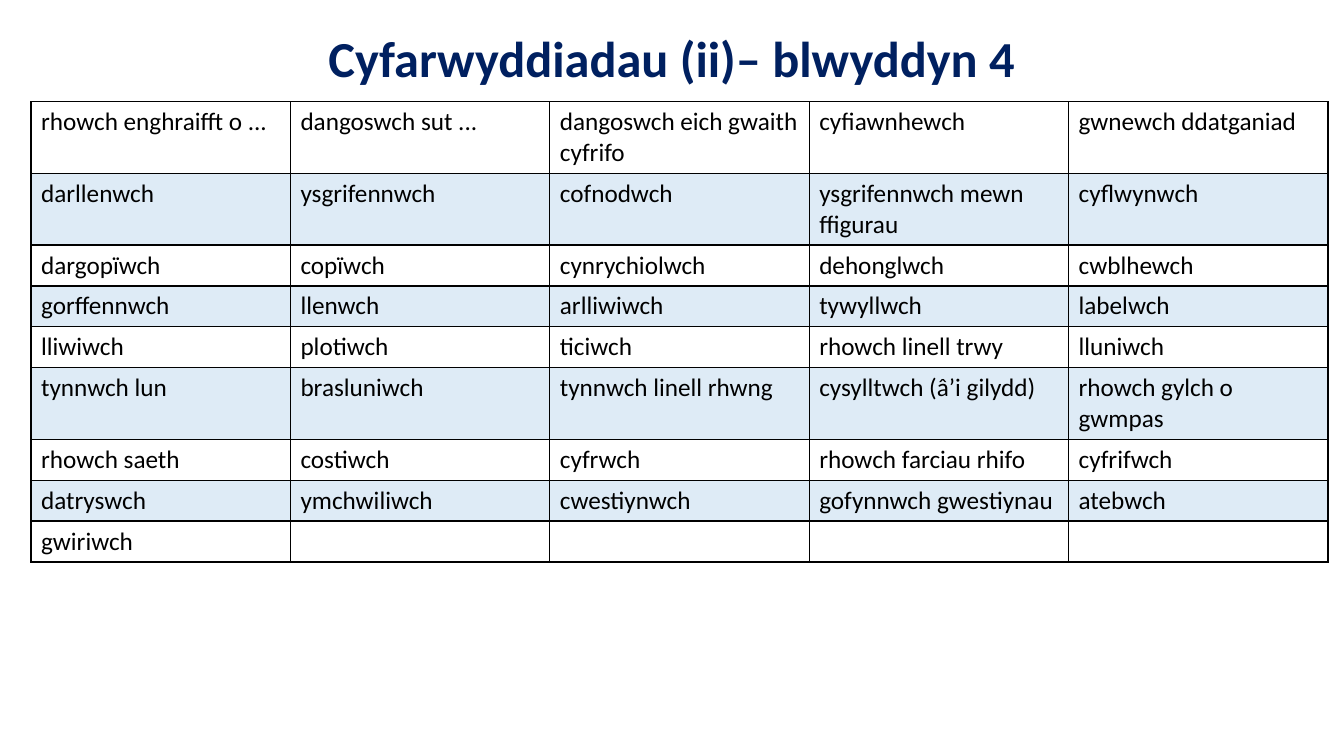
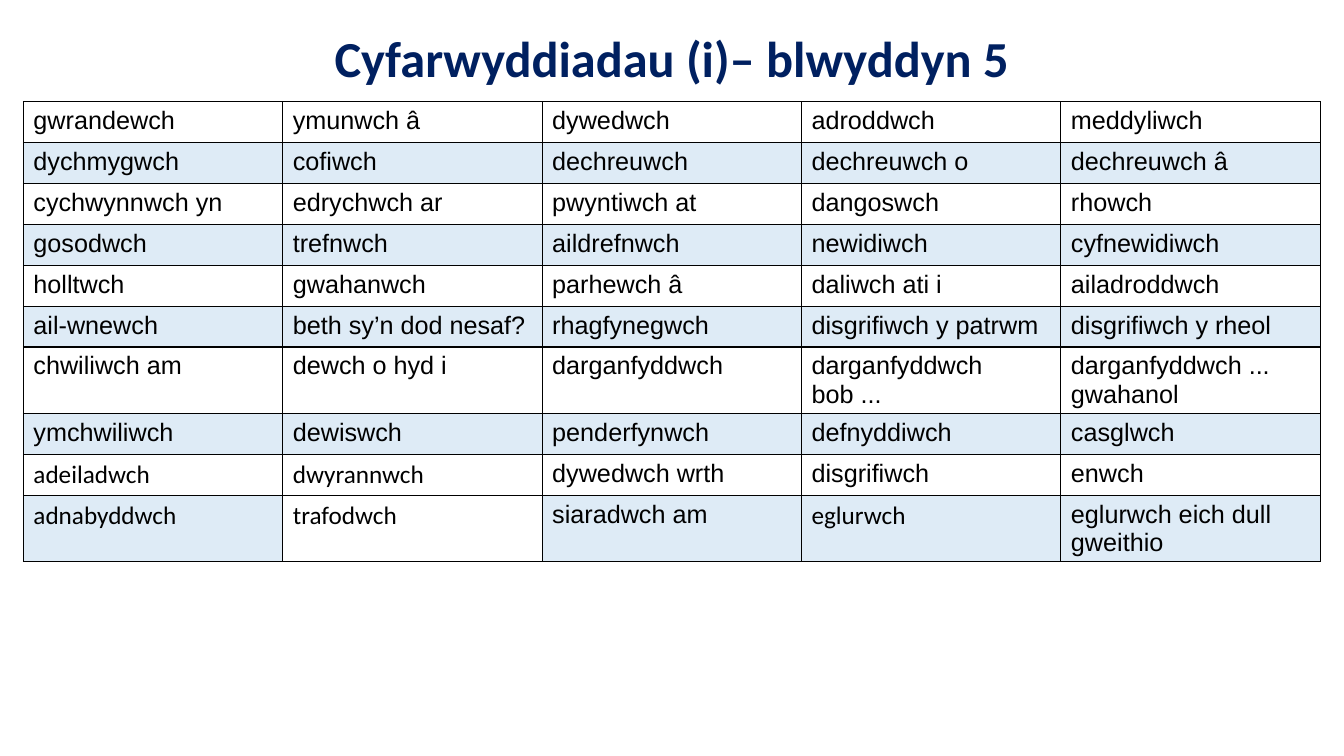
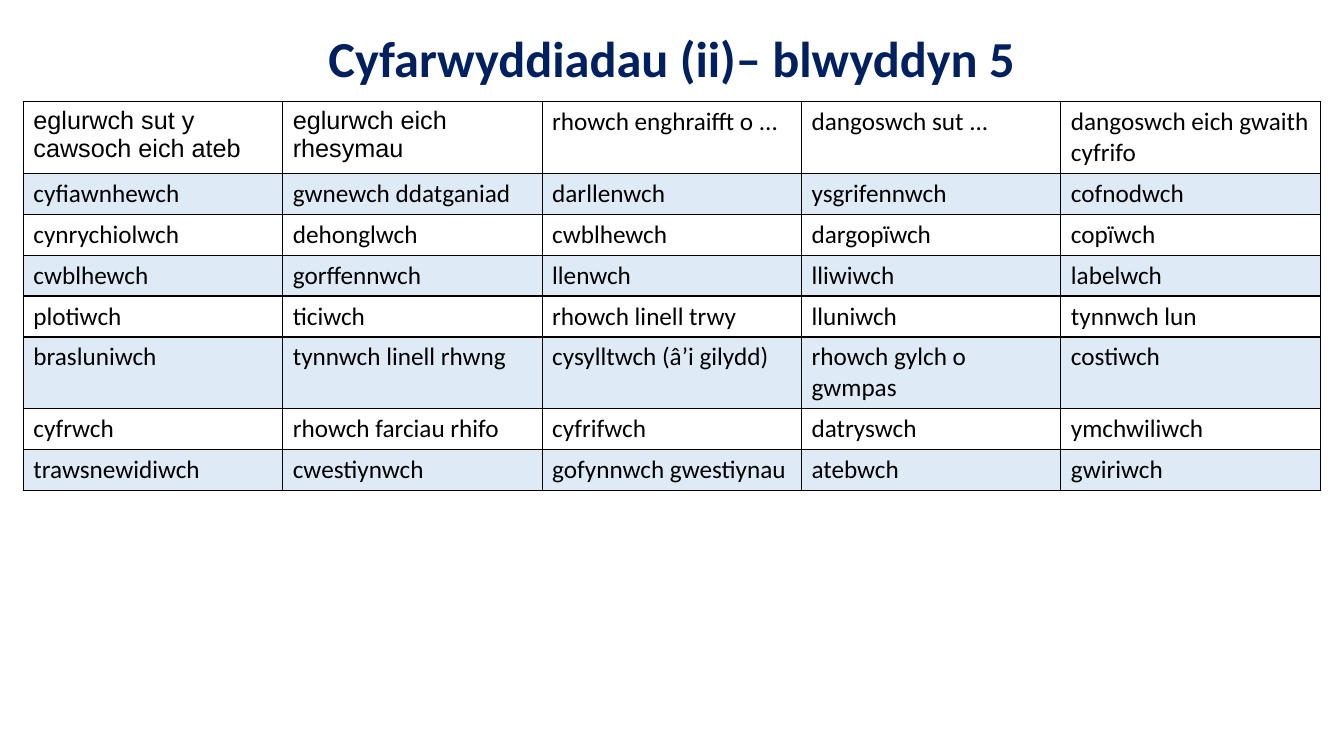
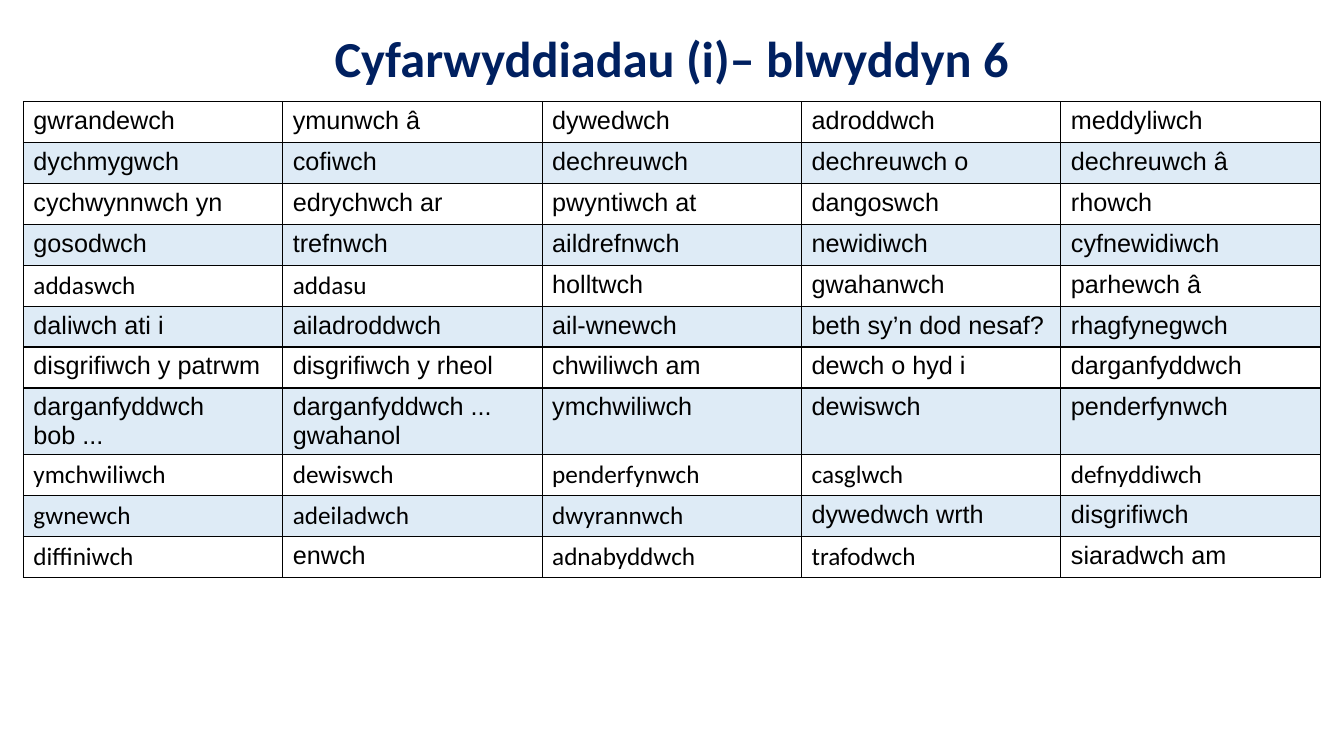
from lxml import etree
from pptx import Presentation
from pptx.dml.color import RGBColor
from pptx.enum.text import MSO_ANCHOR, MSO_AUTO_SIZE, PP_ALIGN
from pptx.oxml.ns import qn
from pptx.util import Pt

MIDDLE, CENTER, NO_FIT = MSO_ANCHOR.MIDDLE, PP_ALIGN.CENTER, MSO_AUTO_SIZE.NONE
CALIBRI, ARIAL = "Calibri", "Arial"
NAVY, BLACK, BLUE = "002060", "000000", "5B9BD5"
TITLE_ONLY = 5

TITLE_FORMAT = {"name": CALIBRI, "size": Pt(36), "bold": True}
TITLE_BOX = (66, 14.4, 828, 58.3)
TABLE_TOP, COLUMN_WIDTH, ROW_HEIGHT = 72.7, 185.3, 29.2
SHADE_OPACITY = 20

# One line per table row; a leading * marks a cell in the second font
WORDS_4_II = """
rhowch enghraifft o ...|dangoswch sut ...|dangoswch eich gwaith cyfrifo|cyfiawnhewch|gwnewch ddatganiad
darllenwch|ysgrifennwch|cofnodwch|ysgrifennwch mewn ffigurau|cyflwynwch
dargopïwch|copïwch|cynrychiolwch|dehonglwch|cwblhewch
gorffennwch|llenwch|arlliwiwch|tywyllwch|labelwch
lliwiwch|plotiwch|ticiwch|rhowch linell trwy|lluniwch
tynnwch lun|brasluniwch|tynnwch linell rhwng|cysylltwch (â’i gilydd)|rhowch gylch o gwmpas
rhowch saeth|costiwch|cyfrwch|rhowch farciau rhifo|cyfrifwch
datryswch|ymchwiliwch|cwestiynwch|gofynnwch gwestiynau|atebwch
gwiriwch||||
"""
WORDS_5_I = """
gwrandewch|ymunwch â|dywedwch|adroddwch|meddyliwch
dychmygwch|cofiwch|dechreuwch|dechreuwch o|dechreuwch â
cychwynnwch yn|edrychwch ar|pwyntiwch at|dangoswch|rhowch
gosodwch|trefnwch|aildrefnwch|newidiwch|cyfnewidiwch
holltwch|gwahanwch|parhewch â|daliwch ati i|ailadroddwch
ail-wnewch|beth sy’n dod nesaf?|rhagfynegwch|disgrifiwch y patrwm|disgrifiwch y rheol
chwiliwch am|dewch o hyd i|darganfyddwch|darganfyddwch bob ...|darganfyddwch ... gwahanol
ymchwiliwch|dewiswch|penderfynwch|defnyddiwch|casglwch
*adeiladwch|*dwyrannwch|dywedwch wrth|disgrifiwch|enwch
*adnabyddwch|*trafodwch|siaradwch am|*eglurwch|eglurwch eich dull gweithio
"""
WORDS_5_II = """
*eglurwch sut y cawsoch eich ateb|*eglurwch eich rhesymau|rhowch enghraifft o ...|dangoswch sut ...|dangoswch eich gwaith cyfrifo
cyfiawnhewch|gwnewch ddatganiad|darllenwch|ysgrifennwch|cofnodwch
cynrychiolwch|dehonglwch|cwblhewch|dargopïwch|copïwch
cwblhewch|gorffennwch|llenwch|lliwiwch|labelwch
plotiwch|ticiwch|rhowch linell trwy|lluniwch|tynnwch lun
brasluniwch|tynnwch linell rhwng|cysylltwch (â’i gilydd)|rhowch gylch o gwmpas|costiwch
cyfrwch|rhowch farciau rhifo|cyfrifwch|datryswch|ymchwiliwch
trawsnewidiwch|cwestiynwch|gofynnwch gwestiynau|atebwch|gwiriwch
"""
WORDS_6_I = """
gwrandewch|ymunwch â|dywedwch|adroddwch|meddyliwch
dychmygwch|cofiwch|dechreuwch|dechreuwch o|dechreuwch â
cychwynnwch yn|edrychwch ar|pwyntiwch at|dangoswch|rhowch
gosodwch|trefnwch|aildrefnwch|newidiwch|cyfnewidiwch
*addaswch|*addasu|holltwch|gwahanwch|parhewch â
daliwch ati i|ailadroddwch|ail-wnewch|beth sy’n dod nesaf?|rhagfynegwch
disgrifiwch y patrwm|disgrifiwch y rheol|chwiliwch am|dewch o hyd i|darganfyddwch
darganfyddwch bob ...|darganfyddwch ... gwahanol|ymchwiliwch|dewiswch|penderfynwch
*ymchwiliwch|*dewiswch|*penderfynwch|*casglwch|*defnyddiwch
*gwnewch|*adeiladwch|*dwyrannwch|dywedwch wrth|disgrifiwch
*diffiniwch|enwch|*adnabyddwch|*trafodwch|siaradwch am
"""

# Title, table left, main font, second font, words, unshaded cells
SLIDES = [
    ("Cyfarwyddiadau (ii)– blwyddyn 4", 22.2, CALIBRI, ARIAL, WORDS_4_II, []),
    ("Cyfarwyddiadau (i)– blwyddyn 5", 16.7, ARIAL, CALIBRI, WORDS_5_I, [(9, 1)]),
    ("Cyfarwyddiadau (ii)– blwyddyn 5", 16.7, CALIBRI, ARIAL, WORDS_5_II, []),
    ("Cyfarwyddiadau (i)– blwyddyn 6", 16.7, ARIAL, CALIBRI, WORDS_6_I, []),
]


def color(value):
    return RGBColor.from_string(value)


def format_font(font, values, hex_color):
    for name, value in values.items():
        setattr(font, name, value)
    font.color.rgb = color(hex_color)


def add_solid(parent, hex_color):
    fill = etree.SubElement(parent, qn("a:solidFill"))
    return etree.SubElement(fill, qn("a:srgbClr"), val=hex_color)


def style_cell(cell, shaded):
    # Borders come before the fill in the cell properties
    properties = cell._tc.get_or_add_tcPr()
    for side in ("lnL", "lnR", "lnT", "lnB"):
        line = etree.SubElement(properties, qn(f"a:{side}"), w=str(Pt(1)))
        add_solid(line, BLACK)
    if shaded:
        shade = add_solid(properties, BLUE)
        etree.SubElement(shade, qn("a:alpha"), val=str(SHADE_OPACITY * 1000))
    else:
        cell.fill.background()


def add_title(slide, text, box):
    title = slide.shapes.title
    title.left, title.top, title.width, title.height = map(Pt, box)
    frame = title.text_frame
    frame.auto_size, frame.vertical_anchor = NO_FIT, MIDDLE
    para = frame.paragraphs[0]
    para.text, para.alignment, para.line_spacing = text, CENTER, 0.9
    format_font(para.runs[0].font, TITLE_FORMAT, NAVY)


def add_word_table(slide, left, top, words, main_font, second_font, unshaded):
    rows = [line.split("|") for line in words.strip().splitlines()]
    columns = len(rows[0])
    table = slide.shapes.add_table(
        len(rows), columns, Pt(left), Pt(top),
        Pt(columns * COLUMN_WIDTH), Pt(len(rows) * ROW_HEIGHT)).table
    table.first_row = table.horz_banding = False
    for column in table.columns:
        column.width = Pt(COLUMN_WIDTH)
    for row_index, row in enumerate(rows):
        table.rows[row_index].height = Pt(ROW_HEIGHT)
        for column_index, word in enumerate(row):
            cell = table.cell(row_index, column_index)
            style_cell(cell, row_index % 2 == 1 and (row_index, column_index) not in unshaded)
            font_name = second_font if word.startswith("*") else main_font
            para = cell.text_frame.paragraphs[0]
            if word:
                span = para.add_run()
                span.text = word.lstrip("*")
                format_font(span.font, {"name": font_name, "size": Pt(18)}, BLACK)


def main():
    deck = Presentation()
    deck.slide_width, deck.slide_height = Pt(960), Pt(540)
    for title, left, main_font, second_font, words, unshaded in SLIDES:
        slide = deck.slides.add_slide(deck.slide_layouts[TITLE_ONLY])
        add_title(slide, title, TITLE_BOX)
        add_word_table(slide, left, TABLE_TOP, words, main_font, second_font, unshaded)
    deck.save("out.pptx")


if __name__ == "__main__":
    main()
